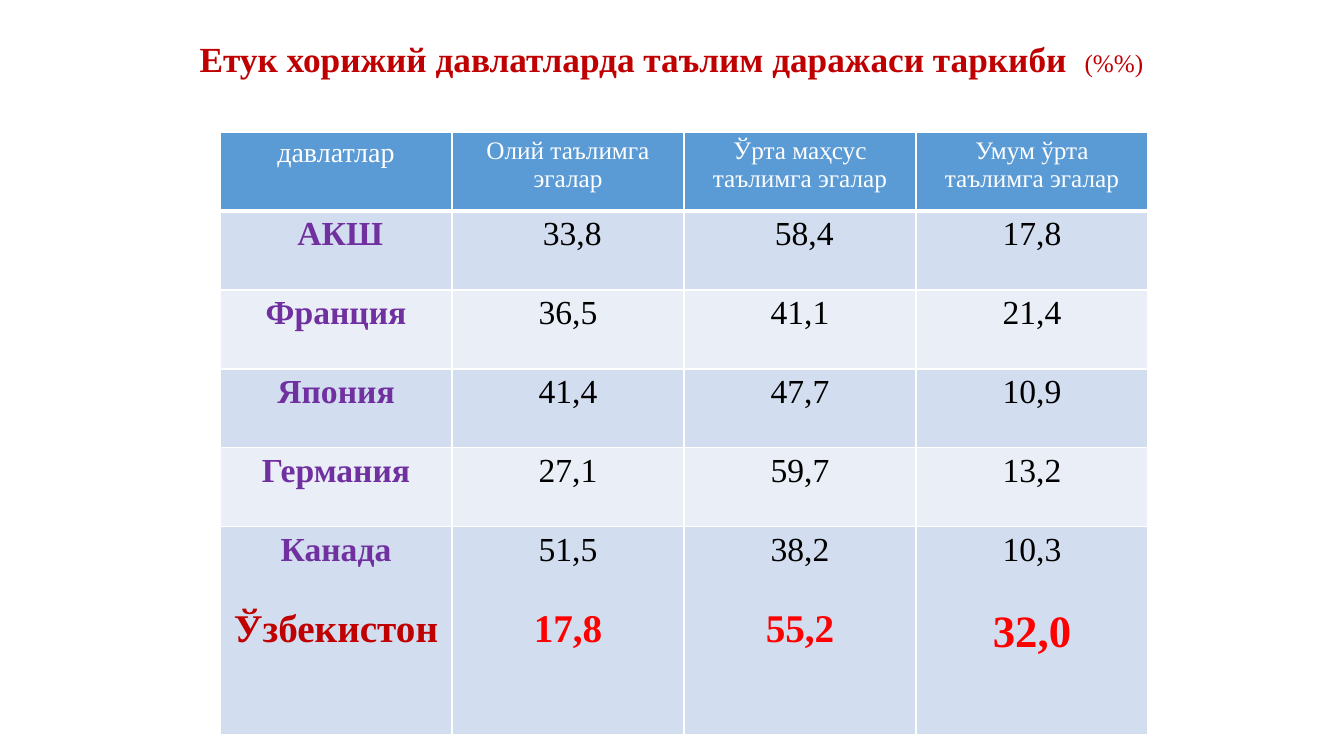
from pptx import Presentation
from pptx.dml.color import RGBColor as Rgb
from pptx.enum.text import MSO_ANCHOR as Anchor, MSO_AUTO_SIZE as Fit, PP_ALIGN as Align
from pptx.oxml import parse_xml
from pptx.oxml.ns import nsdecls
from pptx.util import Pt

PX = 914400 / 100.8
FONT = "Times New Roman"
WHITE, BLACK, RED, WINE, PURPLE = "FFFFFF", "000000", "FF0000", "C00000", "7030A0"
HEAD, BANDS = "5B9BD5", ("EAEFF7", "D2DEEF")


def px(n):
    return round(n * PX)


def write(para, text, size=24, color=BLACK, bold=False):
    para.alignment = Align.CENTER
    run = para.add_run()
    run.text = text
    font = run.font
    font.name, font.size, font.bold = FONT, Pt(size), bold
    font.color.rgb = Rgb.from_string(color)


deck = Presentation()
deck.slide_width, deck.slide_height = px(1344), px(756)
slide = deck.slides.add_slide(deck.slide_layouts[5])

title = slide.shapes.title
title.left, title.top, title.width, title.height = px(187), px(21), px(969), px(80)
frame = title.text_frame
frame.auto_size = Fit.NONE
frame.word_wrap = True
frame.vertical_anchor = Anchor.MIDDLE
para = frame.paragraphs[0]
para.line_spacing = 0.9
write(para, "Етук хорижий давлатларда таълим даражаси таркиби  ", size=25.2, color=WINE, bold=True)
write(para, "(%%)", size=18, color=WINE)

rows = [
    ("давлатлар", "Олий таълимга эгалар", "Ўрта маҳсус таълимга эгалар", "Умум ўрта таълимга эгалар"),
    (" АКШ", " 33,8", " 58,4", "17,8"),
    ("Франция", "36,5", "41,1", "21,4"),
    ("Япония", "41,4", "47,7", "10,9"),
    ("Германия", "27,1", "59,7", "13,2"),
    ("Канада", "51,5", "38,2", "10,3"),
]
home = ("Ўзбекистон", "17,8", "55,2", "32,0")
last = len(rows) - 1

table = slide.shapes.add_table(len(rows), 4, px(220), px(132), px(928), px(603)).table
for col in table.columns:
    col.width = px(232)
for r, row in enumerate(rows):
    table.rows[r].height = px(208 if r == last else 79)
    for c, text in enumerate(row):
        cell = table.cell(r, c)
        props = cell._tc.get_or_add_tcPr()
        for side in "LRTB":
            wide = 3 if r == 0 and side == "B" else 1
            props.append(parse_xml(
                f'<a:ln{side} {nsdecls("a")} w="{Pt(wide)}"><a:solidFill>'
                f'<a:srgbClr val="{WHITE}"/></a:solidFill></a:ln{side}>'))
        cell.fill.solid()
        cell.fill.fore_color.rgb = Rgb.from_string(BANDS[r % 2] if r else HEAD)
        para = cell.text_frame.paragraphs[0]
        if r == 0:
            write(para, text, size=18 if c else 20, color=WHITE)
        else:
            write(para, text, color=BLACK if c else PURPLE, bold=c == 0)
        if r == last:
            para = cell.text_frame.add_paragraph()
            para.space_before = Pt(27.6)
            write(para, home[c], size=32 if c == 3 else 28, color=RED if c else WINE, bold=True)

deck.save("out.pptx")
